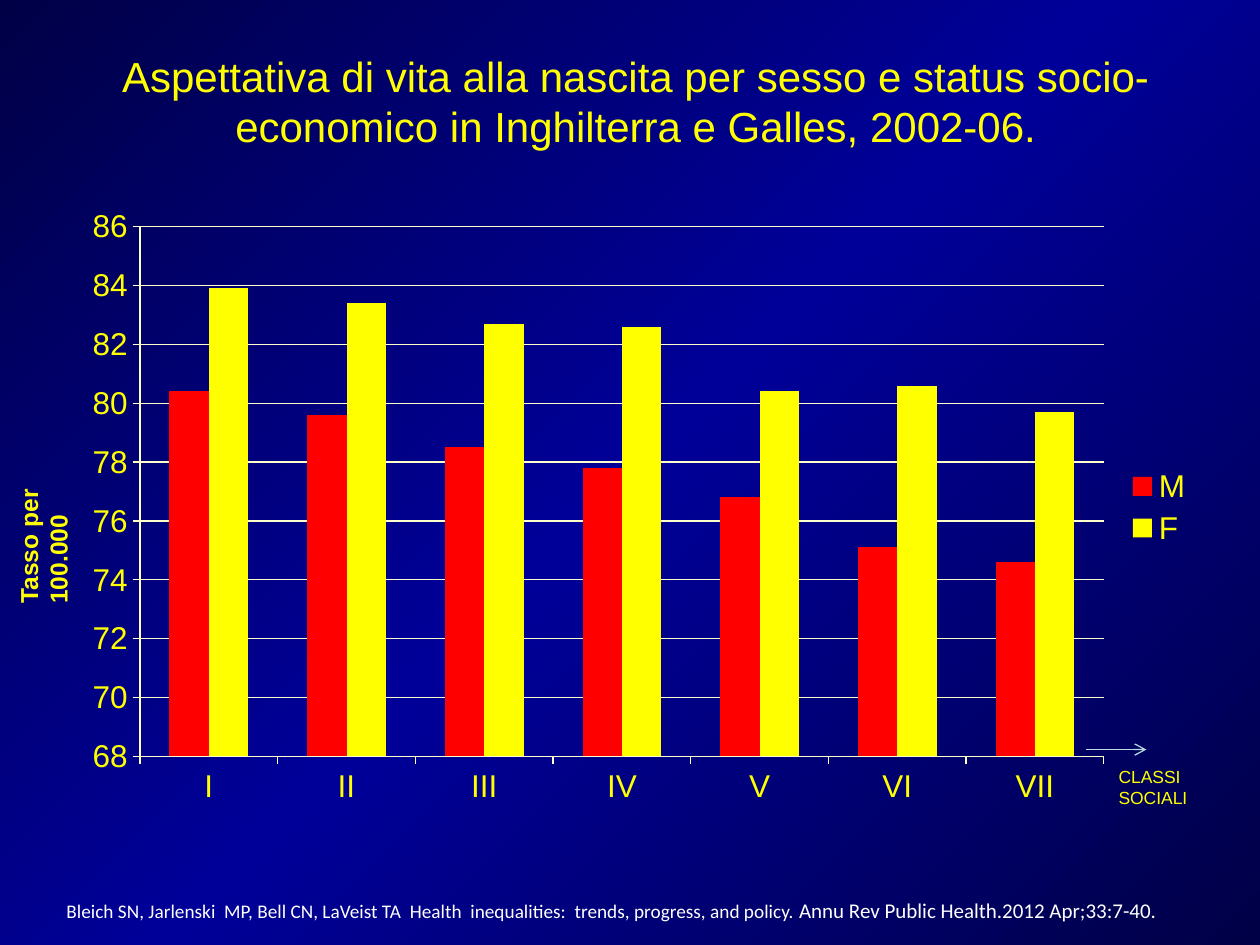
from copy import deepcopy
from lxml.etree import SubElement as Sub
from pptx import Presentation
from pptx.chart.data import CategoryChartData as Data
from pptx.dml.color import RGBColor
from pptx.enum.chart import XL_CHART_TYPE as Kind, XL_LEGEND_POSITION as Spot, XL_TICK_MARK as Tick
from pptx.enum.shapes import MSO_CONNECTOR as Link
from pptx.enum.text import MSO_ANCHOR as Anchor, PP_ALIGN as Align
from pptx.oxml.ns import qn
from pptx.util import Cm, Pt

YELLOW = RGBColor(0xFF, 0xFF, 0x00)
RED = RGBColor(0xFF, 0x00, 0x00)
WHITE = RGBColor(0xFF, 0xFF, 0xFF)
CREAM = RGBColor(0xFF, 0xFF, 0xCC)
PALE = RGBColor(0xB6, 0xDC, 0xDF)
NAVY = RGBColor(0x00, 0x00, 0x47)
BLUE = RGBColor(0x00, 0x00, 0x99)

CLASSES = ["I", "II", "III", "IV", "V", "VI", "VII"]
SERIES = [
    ("M", RED, [80.4, 79.6, 78.5, 77.8, 76.8, 75.1, 74.6]),
    ("F", YELLOW, [83.9, 83.4, 82.7, 82.6, 80.4, 80.6, 79.7]),
]
CHART = (1.45, 3.94, 22.86, 12.57)
PLOT = {"x": 0.06, "y": 0.05, "w": 0.85, "h": 0.85}
SCALE = {"minimum_scale": 68, "maximum_scale": 86, "major_unit": 2,
         "has_major_gridlines": True}
ARROW = (21.9, 15.11, 23.11, 15.11)

TITLE = ("Aspettativa di vita alla nascita per sesso e status "
         "socio-economico in Inghilterra e Galles, 2002-06.")
SOURCE = ("Bleich SN, Jarlenski  MP, Bell CN, LaVeist TA  Health  inequalities:  "
          "trends, progress, and policy.")
JOURNAL = "Annu Rev Public Health.2012 Apr;33:7-40."


def look(size, name="Arial", color=YELLOW, bold=False):
    return {"size": Pt(size), "name": name, "color": color, "bold": bold}


TEXTS = [
    {"box": (1.4, 0.41, 22.83, 3.23), "anchor": Anchor.MIDDLE, "align": Align.CENTER,
     "runs": [(TITLE, look(24))]},
    {"box": (0.15, 7.92, 1.12, 4.5), "turn": "vert270",
     "runs": [("Tasso per 100.000", look(14, bold=True))]},
    {"box": (22.3, 15.32, 2.01, 1.12), "runs": [("CLASSI SOCIALI", look(10))]},
    {"box": (1.09, 17.96, 23.8, 0.76), "anchor": Anchor.MIDDLE,
     "runs": [(SOURCE, look(11, "Calibri", WHITE)),
              (" ", look(8, color=WHITE)),
              (JOURNAL, look(12, "Calibri", WHITE))]},
]


def style(font, form):
    for key, val in form.items():
        if key == "color":
            font.color.rgb = val
        else:
            setattr(font, key, val)


def paint(slide):
    fill = slide.background.fill
    fill.gradient()
    fill.gradient_angle = 315
    first = next(slide.element.iter(qn("a:gs")))
    first.addnext(deepcopy(first))
    for stop, (place, color) in zip(fill.gradient_stops,
                                    [(0, NAVY), (0.5, BLUE), (1, NAVY)]):
        stop.position = place
        stop.color.rgb = color


def write(slide, box, runs, anchor=Anchor.TOP, align=Align.LEFT, turn=None):
    frame = slide.shapes.add_textbox(*map(Cm, box)).text_frame
    frame.word_wrap = True
    frame.vertical_anchor = anchor
    if turn:
        frame._txBody.bodyPr.set("vert", turn)
    para = frame.paragraphs[0]
    para.alignment = align
    for text, form in runs:
        run = para.add_run()
        run.text = text
        style(run.font, form)


def place(chart):
    area = chart._chartSpace.chart.plotArea
    for old in area.findall(qn("c:layout")):
        area.remove(old)
    frame = area.makeelement(qn("c:layout"))
    area.insert(0, frame)
    inner = Sub(frame, qn("c:manualLayout"))
    rules = {"layoutTarget": "inner", "xMode": "edge", "yMode": "edge", **PLOT}
    for key, val in rules.items():
        Sub(inner, qn("c:" + key)).set("val", str(val))


def plot(slide):
    data = Data(number_format="General")
    data.categories = CLASSES
    for name, _, vals in SERIES:
        data.add_series(name, vals)
    chart = slide.shapes.add_chart(Kind.COLUMN_CLUSTERED, *map(Cm, CHART), data).chart
    style(chart.font, look(18))
    chart.has_title = False
    chart.has_legend = True
    chart.legend.position = Spot.RIGHT
    chart.legend.include_in_layout = False
    bars = chart.plots[0]
    bars.gap_width = 150
    bars.overlap = 0
    bars.vary_by_categories = False
    for item, (_, color, _) in zip(bars.series, SERIES):
        item.format.fill.solid()
        item.format.fill.fore_color.rgb = color
    rise = chart.value_axis
    for key, val in SCALE.items():
        setattr(rise, key, val)
    for axis in (rise, chart.category_axis):
        axis.major_tick_mark = Tick.OUTSIDE
    for part in (rise, chart.category_axis, rise.major_gridlines):
        part.format.line.color.rgb = CREAM
        part.format.line.width = Pt(0.75)
    place(chart)


def point(slide):
    arrow = slide.shapes.add_connector(Link.STRAIGHT, *map(Cm, ARROW))
    arrow.line.color.rgb = PALE
    arrow.line.width = Pt(0.75)
    Sub(arrow.line._get_or_add_ln(), qn("a:tailEnd")).set("type", "arrow")
    Sub(arrow._element.spPr, qn("a:effectLst"))


def main():
    deck = Presentation()
    deck.slide_width, deck.slide_height = Cm(25.4), Cm(19.05)
    slide = deck.slides.add_slide(deck.slide_layouts[6])
    paint(slide)
    plot(slide)
    for text in TEXTS:
        write(slide, **text)
    point(slide)
    deck.save("out.pptx")


if __name__ == "__main__":
    main()
